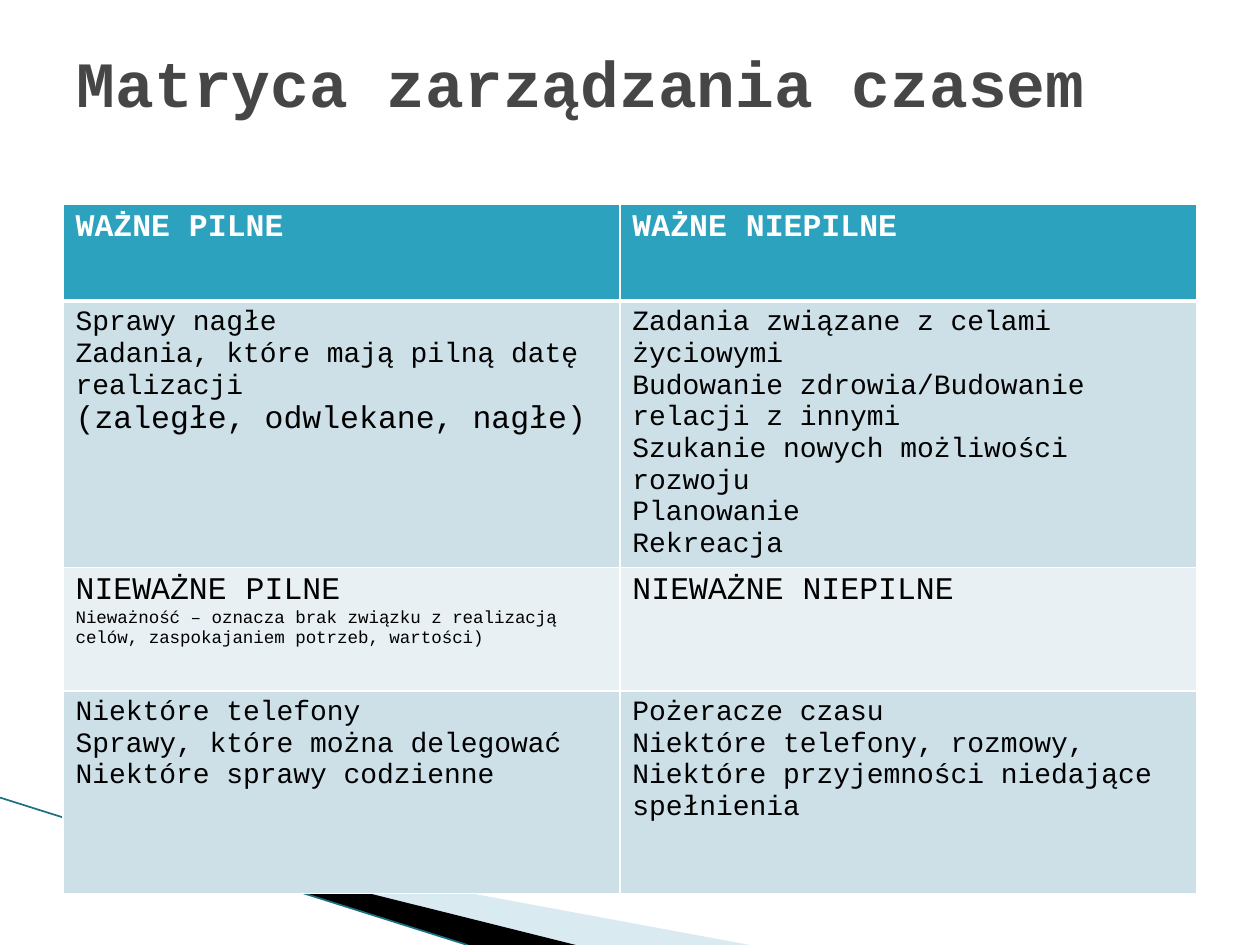
from lxml import etree
from pptx import Presentation, util as u
from pptx.dml.color import RGBColor
from pptx.enum import shapes, text
from pptx.oxml import ns

WHITE = RGBColor(0xFF, 0xFF, 0xFF)
BLACK = RGBColor(0, 0, 0)
TITLE_GREY = RGBColor(0x46, 0x46, 0x46)
HEADER_TEAL = RGBColor(0x2D, 0xA2, 0xBF)
BAND_BLUE = RGBColor(0xCD, 0xE0, 0xE8)
BAND_PALE = RGBColor(0xE8, 0xF0, 0xF4)
WEDGE_BLUE = RGBColor(0xA0, 0xCB, 0xDC)
LINE_TEAL = RGBColor(0x18, 0x70, 0x85)
FONT = "Courier New"


def write(para, words, size, color=BLACK, bold=False):
    span = para.add_run()
    span.text = words
    span.font.name = FONT
    span.font.size = u.Pt(size)
    span.font.bold = bold
    span.font.color.rgb = color


def set_borders(cell, widths):
    """Draw white borders; widths maps a side (L, R, T, B) to points."""
    properties = cell._tc.get_or_add_tcPr()
    for index, (side, width) in enumerate(widths.items()):
        line = etree.Element(ns.qn(f"a:ln{side}"), w=str(u.Pt(width)))
        fill = etree.SubElement(line, ns.qn("a:solidFill"))
        etree.SubElement(fill, ns.qn("a:srgbClr"), val=str(WHITE))
        properties.insert(index, line)


deck = Presentation()
deck.slide_width, deck.slide_height = u.Inches(10), u.Inches(7.5)
page = deck.slides.add_slide(deck.slide_layouts[5])

# Corner decoration
wedges = [
    ([(0.55, 6.5), (5.95, 7.5), (4.56, 7.5)], WEDGE_BLUE, 40),
    ([(0.53, 6.49), (4.57, 7.5), (3.72, 7.5)], BLACK, 100),
]
for points, color, opacity in wedges:
    corners = [(u.Inches(x), u.Inches(y)) for x, y in points]
    builder = page.shapes.build_freeform(*corners[0])
    builder.add_line_segments(corners[1:], close=True)
    wedge = builder.convert_to_shape()
    wedge.shadow.inherit = False
    wedge.fill.solid()
    wedge.fill.fore_color.rgb = color
    wedge.line.fill.background()
    if opacity < 100:
        tint = wedge._element.spPr.find(".//" + ns.qn("a:srgbClr"))
        etree.SubElement(tint, ns.qn("a:alpha"), val=str(opacity * 1000))

edge = page.shapes.add_connector(
    shapes.MSO_CONNECTOR.STRAIGHT, 0, u.Inches(6.33), u.Inches(3.71), deck.slide_height)
edge.line.color.rgb = LINE_TEAL
edge.line.width = u.Pt(0.95)
etree.SubElement(edge._element.spPr, ns.qn("a:effectLst"))

# Title
title = page.shapes.title
title.left, title.top = u.Inches(0.51), 0
title.width, title.height = u.Inches(9), u.Inches(1.3)
title.text_frame.vertical_anchor = text.MSO_ANCHOR.MIDDLE
title.text_frame.word_wrap = True
heading = title.text_frame.paragraphs[0]
heading.alignment = text.PP_ALIGN.LEFT
write(heading, "Matryca zarządzania czasem", 36.9, TITLE_GREY, bold=True)

# Time management matrix: each row has a height, a fill and two cells of (words, size)
rows = [
    (0.77, HEADER_TEAL, [[("WAŻNE PILNE", 18)], [("WAŻNE NIEPILNE", 18)]]),
    (2.1, BAND_BLUE, [
        [("Sprawy nagłe", 16),
         ("Zadania, które mają pilną datę realizacji", 16),
         ("(zaległe, odwlekane, nagłe)", 18)],
        [("Zadania związane z celami życiowymi", 16),
         ("Budowanie zdrowia/Budowanie relacji z innymi", 16),
         ("Szukanie nowych możliwości rozwoju", 16),
         ("Planowanie", 16),
         ("Rekreacja", 16)],
    ]),
    (0.98, BAND_PALE, [
        [("NIEWAŻNE PILNE", 18),
         ("Nieważność – oznacza brak związku z realizacją celów, "
          "zaspokajaniem potrzeb, wartości)", 10)],
        [("NIEWAŻNE NIEPILNE", 18)],
    ]),
    (1.61, BAND_BLUE, [
        [("Niektóre telefony", 16),
         ("Sprawy, które można delegować", 16),
         ("Niektóre sprawy codzienne", 16)],
        [("Pożeracze czasu", 16),
         ("Niektóre telefony, rozmowy,", 16),
         ("Niektóre przyjemności niedające spełnienia", 16)],
    ]),
]
height = sum(row[0] for row in rows)
matrix = page.shapes.add_table(
    len(rows), 2, u.Inches(0.5), u.Inches(1.62), u.Inches(9), u.Inches(height)).table
for column, width in zip(matrix.columns, (4.42, 4.58)):
    column.width = u.Inches(width)

for r, (row_height, color, entries) in enumerate(rows):
    matrix.rows[r].height = u.Inches(row_height)
    for c, lines in enumerate(entries):
        cell = matrix.cell(r, c)
        cell.fill.solid()
        cell.fill.fore_color.rgb = color
        set_borders(cell, {"L": 1, "R": 1, "T": 3 if r == 1 else 1, "B": 3 if r == 0 else 1})
        for index, (words, size) in enumerate(lines):
            frame = cell.text_frame
            para = frame.add_paragraph() if index else frame.paragraphs[0]
            write(para, words, size, WHITE if r == 0 else BLACK, bold=r == 0)

deck.save("out.pptx")
